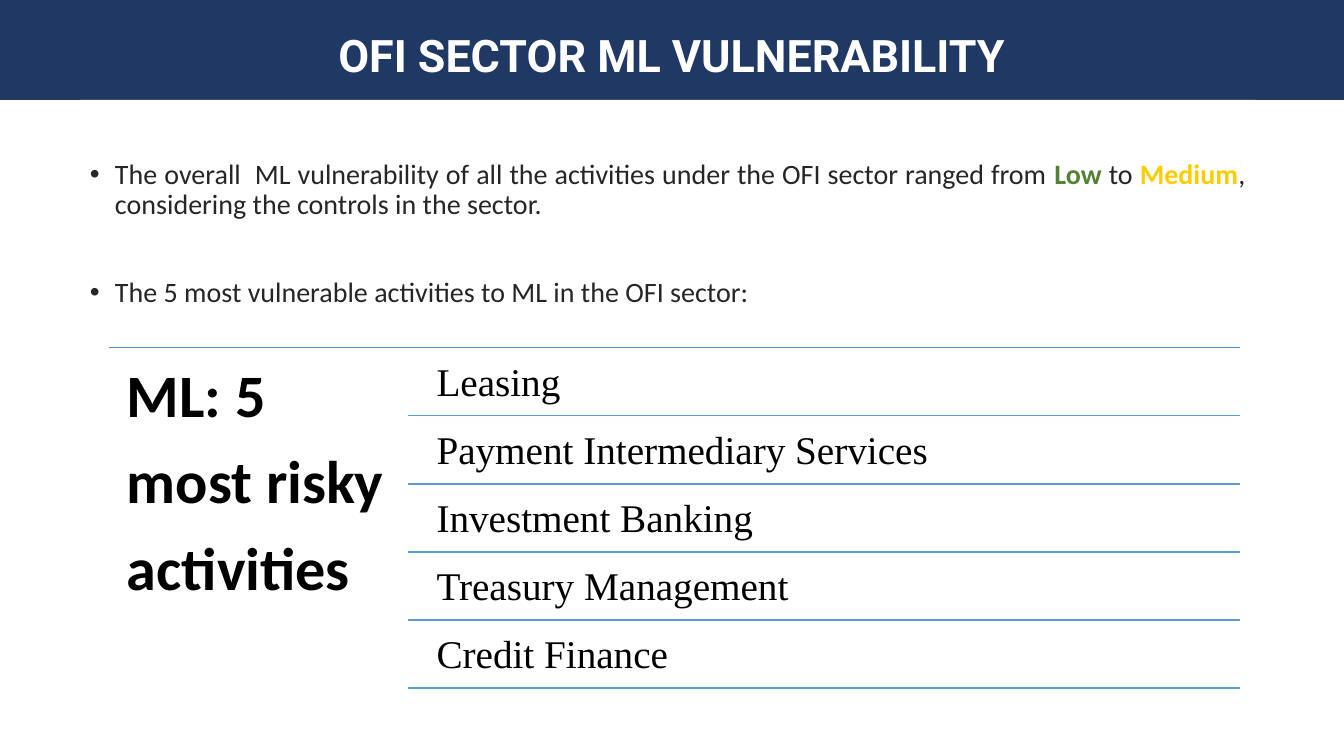
from dataclasses import dataclass

from pptx import Presentation
from pptx.dml.color import RGBColor as Color
from pptx.enum.shapes import MSO_CONNECTOR as Link
from pptx.enum.text import MSO_ANCHOR as Anchor, MSO_AUTO_SIZE as Fit, PP_ALIGN as Align
from pptx.oxml.ns import qn
from pptx.oxml.xmlchemy import OxmlElement as Element
from pptx.shapes.base import BaseShape as Shape
from pptx.slide import Slide
from pptx.text.text import TextFrame as Frame, _Paragraph as Para
from pptx.util import Inches, Pt

WIDTH, HEIGHT = Inches(13.33), Inches(7.5)


@dataclass(frozen=True)
class Theme:
    navy: str = "203864"
    white: str = "FFFFFF"
    black: str = "000000"
    ink: str = "262626"
    green: str = "548235"
    gold: str = "FFCC00"
    blue: str = "5B9BD5"
    steel: str = "538DC1"
    title: int = 32
    body: int = 20
    head: int = 43
    item: int = 28
    sans: str = "Calibri"
    serif: str = "Times New Roman"
    show: str = "Roboto"


@dataclass(frozen=True)
class Box:
    """Left, top, width and height in percent of the slide."""
    left: float
    top: float
    width: float
    height: float


@dataclass(frozen=True)
class Part:
    text: str
    color: str
    bold: bool = False


@dataclass(frozen=True)
class Grid:
    """Edges and row pitch of the activity list, in percent of the slide."""
    left: float = 8.1
    split: float = 30.38
    text: float = 31.58
    right: float = 92.27
    top: float = 46
    pitch: float = 9


THEME, GRID = Theme(), Grid()
BULLETS = [
    [Part("The overall  ML vulnerability of all the activities under the OFI "
          "sector ranged from ", THEME.ink),
     Part("Low", THEME.green, True),
     Part(" to ", THEME.ink),
     Part("Medium", THEME.gold, True),
     Part(", considering the controls in the sector.", THEME.ink)],
    [Part("The 5 most vulnerable activities to ML in the OFI sector:", THEME.ink)],
]
HEAD = ["ML: 5", "most risky", "activities"]
ITEMS = ["Leasing", "Payment Intermediary Services", "Investment Banking",
         "Treasury Management", "Credit Finance"]


def across(share: float) -> int:
    return round(WIDTH * share / 100)


def down(share: float) -> int:
    return round(HEIGHT * share / 100)


def place(shape: Shape, box: Box, fill: str) -> Frame:
    """Move and fill a placeholder, and return its text frame."""
    shape.left, shape.top = across(box.left), down(box.top)
    shape.width, shape.height = across(box.width), down(box.height)
    shape.fill.solid()
    shape.fill.fore_color.rgb = Color.from_string(fill)
    frame = shape.text_frame
    frame.auto_size, frame.word_wrap = Fit.NONE, True
    return frame


def style(para: Para, face: str, size: int, color: str, bold: bool = False) -> None:
    font = para.font
    font.name, font.size, font.bold = face, Pt(size), bold
    font.color.rgb = Color.from_string(color)


def bullet(para: Para) -> None:
    props = para._p.get_or_add_pPr()
    props.set("marL", str(Inches(0.25)))
    props.set("indent", str(-Inches(0.25)))
    mark = Element("a:buChar")
    mark.set("char", "•")
    props.insert_element_before(mark, "a:tabLst", "a:defRPr", "a:extLst")


def rule(slide: Slide, left: float, top: float, color: str) -> None:
    """Draw a level line from left to the right edge of the grid."""
    line = slide.shapes.add_connector(
        Link.STRAIGHT, across(left), down(top), across(GRID.right), down(top))
    line.line.color.rgb = Color.from_string(color)
    line.line.width = Pt(1)
    line._element.find(qn("p:spPr")).append(Element("a:effectLst"))


def label(slide: Slide, box: Box, lines: list[str], inset: float,
          face: str, size: int, bold: bool = False) -> None:
    frame = slide.shapes.add_textbox(
        across(box.left), down(box.top), across(box.width), down(box.height)).text_frame
    frame.word_wrap = True
    frame.margin_left = frame.margin_right = Inches(inset)
    frame.margin_top = frame.margin_bottom = Inches(inset)
    frame.text = "\n".join(lines)
    for para in frame.paragraphs:
        style(para, face, size, THEME.black, bold)
        para.line_spacing, para.space_after = 0.9, Pt(size * 0.35)


def banner(slide: Slide) -> None:
    frame = place(slide.shapes.title, Box(0, 0, 100, 13.2), THEME.navy)
    frame.vertical_anchor, frame.margin_top = Anchor.MIDDLE, Inches(0.1)
    frame.text = "OFI SECTOR ML VULNERABILITY"
    para = frame.paragraphs[0]
    para.alignment, para.line_spacing = Align.CENTER, 1.07
    style(para, THEME.show, THEME.title, THEME.white, True)


def points(slide: Slide) -> None:
    frame = place(slide.placeholders[1], Box(5.93, 13.2, 87.47, 84.13), THEME.white)
    frame.vertical_anchor, frame.margin_top = Anchor.TOP, Inches(0.6)
    for rank, parts in enumerate(BULLETS):
        para = frame.add_paragraph() if rank else frame.paragraphs[0]
        para.alignment, para.line_spacing = Align.JUSTIFY, 0.9
        para.space_before = Pt(41 if rank else 0)
        style(para, THEME.sans, THEME.body, THEME.ink)
        bullet(para)
        for part in parts:
            run = para.add_run()
            run.text, run.font.bold = part.text, part.bold
            run.font.color.rgb = Color.from_string(part.color)


def ranking(slide: Slide) -> None:
    rule(slide, GRID.left, GRID.top, THEME.steel)
    box = Box(GRID.left, GRID.top, GRID.split - GRID.left, GRID.pitch * len(ITEMS))
    label(slide, box, HEAD, 0.18, THEME.sans, THEME.head, True)
    for row, item in enumerate(ITEMS):
        top = GRID.top + row * GRID.pitch
        box = Box(GRID.text, top + 0.4, GRID.right - GRID.text, GRID.pitch - 0.45)
        label(slide, box, [item], 0.12, THEME.serif, THEME.item)
        rule(slide, GRID.split, top + GRID.pitch, THEME.blue)


def main() -> None:
    deck = Presentation()
    deck.slide_width, deck.slide_height = WIDTH, HEIGHT
    slide = deck.slides.add_slide(deck.slide_layouts[1])
    banner(slide)
    points(slide)
    ranking(slide)
    deck.save("out.pptx")


if __name__ == "__main__":
    main()
